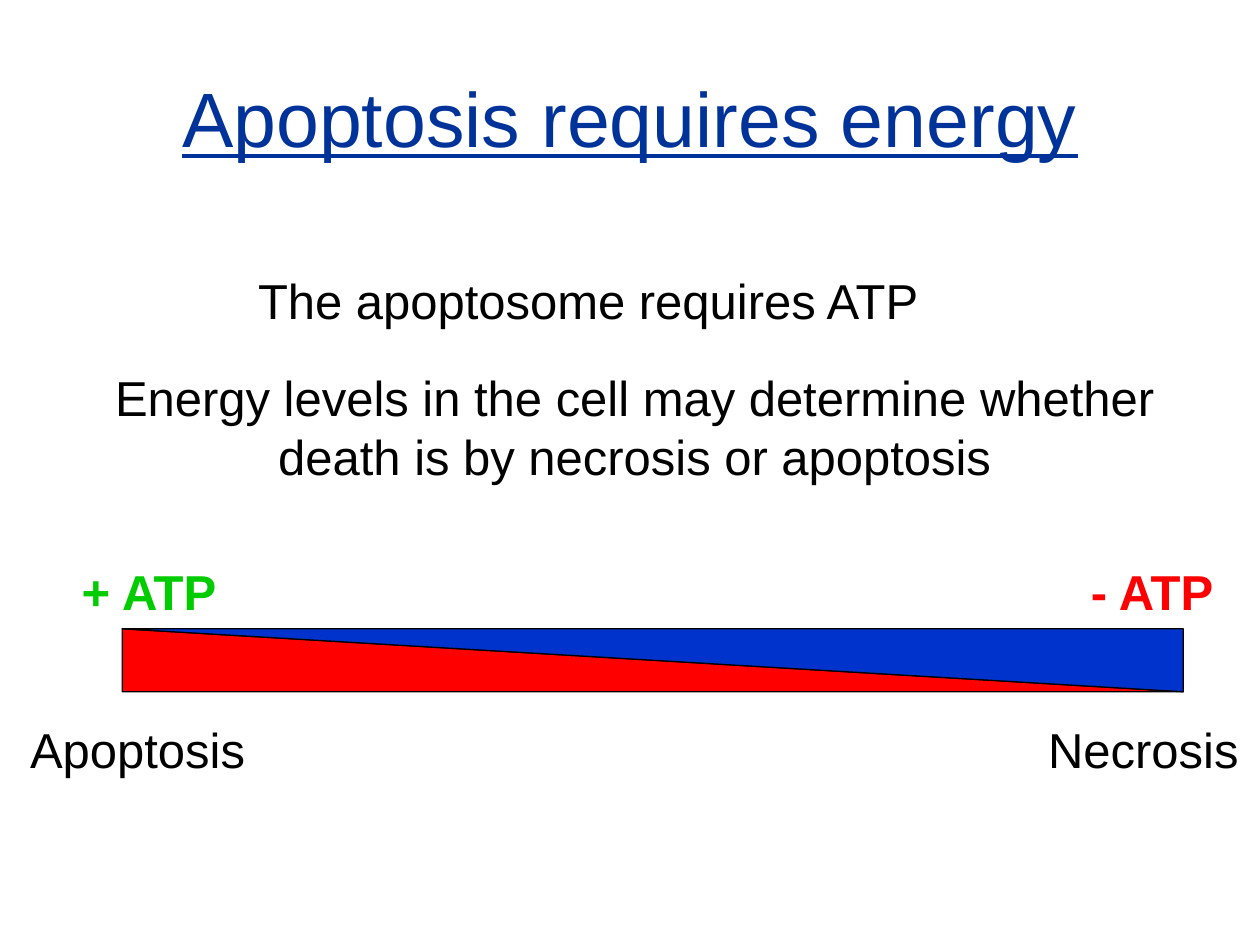
from dataclasses import dataclass

import pptx
import pptx.dml.color
import pptx.enum.shapes
import pptx.enum.text
import pptx.util

Inches = pptx.util.Inches
ALIGN = pptx.enum.text.PP_ALIGN

COLORS = {
    "title": "003399",
    "text": "000000",
    "high_atp": "00CC00",
    "red": "FF0000",
    "blue": "0033CC",
}


@dataclass
class Label:
    lines: list[str]
    left: float
    top: float
    width: float
    height: float = 0.57
    color: str = "text"
    bold: bool = False
    align: ALIGN = ALIGN.LEFT


@dataclass
class Wedge:
    color: str
    rotation: int


LABELS = [
    Label(["Energy levels in the cell may determine whether ",
           "death is by necrosis or apoptosis "],
          0.8, 2.87, 8.58, height=1.03, align=ALIGN.CENTER),
    Label(["The apoptosome requires ATP"], 1.95, 2.1, 5.51),
    Label(["Apoptosis"], 0.14, 5.66, 1.91),
    Label(["Necrosis"], 8.22, 5.66, 1.72),
    Label(["+ ATP"], 0.55, 4.41, 1.31, color="high_atp", bold=True),
    Label(["- ATP"], 8.56, 4.41, 1.22, color="red", bold=True),
]
WEDGES = [Wedge("red", 0), Wedge("blue", 180)]


def rgb(name: str) -> pptx.dml.color.RGBColor:
    return pptx.dml.color.RGBColor.from_string(COLORS[name])


def write_text(text_frame, lines: list[str], *, size: float = 28, color: str = "text",
               bold: bool = False, underline: bool = False,
               align: ALIGN = ALIGN.LEFT) -> None:
    for index, line in enumerate(lines):
        paragraph = text_frame.add_paragraph() if index else text_frame.paragraphs[0]
        paragraph.alignment = align
        run = paragraph.add_run()
        run.text = line
        run.font.name = "Arial"
        run.font.size = pptx.util.Pt(size)
        run.font.bold = bold
        run.font.underline = underline
        run.font.color.rgb = rgb(color)


def draw_label(slide, label: Label) -> None:
    box = slide.shapes.add_textbox(Inches(label.left), Inches(label.top),
                                   Inches(label.width), Inches(label.height))
    box.text_frame.word_wrap = False
    box.text_frame.auto_size = pptx.enum.text.MSO_AUTO_SIZE.SHAPE_TO_FIT_TEXT
    write_text(box.text_frame, label.lines, color=label.color,
               bold=label.bold, align=label.align)


def draw_wedge(group, wedge: Wedge) -> None:
    shape = group.shapes.add_shape(pptx.enum.shapes.MSO_SHAPE.RIGHT_TRIANGLE,
                                   Inches(0.97), Inches(4.99), Inches(8.42), Inches(0.5))
    shape.rotation = wedge.rotation
    shape.shadow.inherit = False
    shape.fill.solid()
    shape.fill.fore_color.rgb = rgb(wedge.color)
    shape.line.color.rgb = rgb("text")
    shape.line.width = pptx.util.Pt(0.75)


def main() -> None:
    presentation = pptx.Presentation()
    presentation.slide_width = Inches(10)
    presentation.slide_height = Inches(7.5)
    slide = presentation.slides.add_slide(presentation.slide_layouts[5])

    # Title
    title = slide.shapes.title
    title.left, title.top = Inches(0.5), Inches(0.3)
    title.width, title.height = Inches(9), Inches(1.25)
    title.text_frame.vertical_anchor = pptx.enum.text.MSO_ANCHOR.MIDDLE
    write_text(title.text_frame, ["Apoptosis requires energy"], size=44,
               color="title", underline=True, align=ALIGN.CENTER)

    # Energy gradient bar made of two opposed wedges
    bar = slide.shapes.add_group_shape()
    for wedge in WEDGES:
        draw_wedge(bar, wedge)

    # Statements and bar labels
    for label in LABELS:
        draw_label(slide, label)

    presentation.save("out.pptx")


if __name__ == "__main__":
    main()
